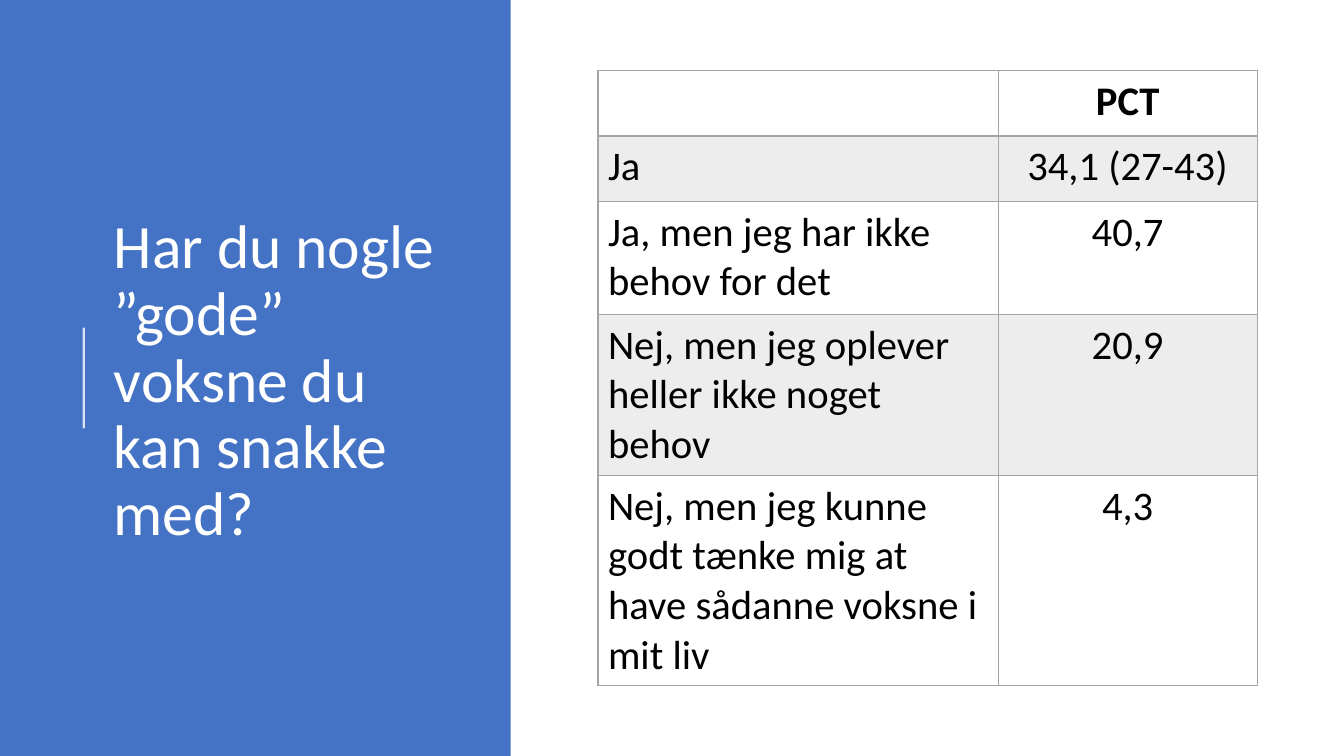
from lxml.etree import SubElement
from pptx import Presentation
from pptx.dml.color import RGBColor
from pptx.enum.shapes import MSO_CONNECTOR as CONN, MSO_SHAPE as SHAPE
from pptx.enum.text import MSO_ANCHOR as ANCHOR, PP_ALIGN as ALIGN
from pptx.oxml.ns import qn
from pptx.util import Inches, Pt

BLUE = RGBColor(0x44, 0x72, 0xC4)
WHITE = RGBColor(0xFF, 0xFF, 0xFF)
BLACK = RGBColor(0x00, 0x00, 0x00)
GREY = RGBColor(0xA5, 0xA5, 0xA5)
BAND = RGBColor(0xED, 0xED, 0xED)

QUESTION = "Har du nogle ”gode” voksne du kan snakke med?"
ANSWERS = [
    ("", "PCT"),
    ("Ja", "34,1 (27-43)"),
    ("Ja, men jeg har ikke behov for det", "40,7"),
    ("Nej, men jeg oplever heller ikke noget behov", "20,9"),
    ("Nej, men jeg kunne godt tænke mig at have sådanne voksne i mit liv", "4,3"),
]
COL_WIDTHS = [29.78, 19.28]
ROW_HEIGHTS = [8.67, 8.67, 14.93, 21.33, 27.73]


class Deck:
    """Slide builder; all lengths are percentages of the slide's size."""

    font = "Calibri"
    title_size = Pt(44)
    table_size = Pt(29)

    def __init__(self, prs):
        self.prs = prs
        self.s = prs.slides.add_slide(prs.slide_layouts[6])

    def x(self, share):
        return round(self.prs.slide_width * share / 100)

    def y(self, share):
        return round(self.prs.slide_height * share / 100)

    def box(self, left, top, width, height):
        return self.x(left), self.y(top), self.x(width), self.y(height)

    def style(self, p, size, color, bold=False):
        p.font.name, p.font.size, p.font.bold = self.font, size, bold
        p.font.color.rgb = color

    def panel(self, *box, color):
        sp = self.s.shapes.add_shape(SHAPE.RECTANGLE, *self.box(*box))
        sp.shadow.inherit = False
        sp.fill.solid()
        sp.fill.fore_color.rgb = color
        sp.line.fill.background()

    def title(self, *box, text):
        tf = self.s.shapes.add_textbox(*self.box(*box)).text_frame
        tf.word_wrap = True
        tf.vertical_anchor = ANCHOR.MIDDLE
        p = tf.paragraphs[0]
        p.text, p.line_spacing = text, 0.9
        self.style(p, self.title_size, WHITE)

    def rule(self, x, top, bottom, opacity):
        line = self.s.shapes.add_connector(
            CONN.STRAIGHT, self.x(x), self.y(bottom), self.x(x), self.y(top))
        line.line.width = Pt(1.5)
        line.line.color.rgb = WHITE
        spPr = line._element.spPr
        SubElement(next(spPr.iter(qn("a:srgbClr"))), qn("a:alpha"), val=str(opacity * 1000))
        SubElement(spPr, qn("a:effectLst"))

    def border(self, cell, side, width):
        tcPr = cell._tc.get_or_add_tcPr()
        ln = SubElement(tcPr, qn(f"a:ln{side}"), w=str(Pt(width)))
        SubElement(SubElement(ln, qn("a:solidFill")), qn("a:srgbClr"), val=str(GREY))

    def cell(self, cell, text, row, col):
        for side in "LRTB":
            under_header = (row, side) in ((0, "B"), (1, "T"))
            self.border(cell, side, 2 if under_header else 1)
        if row % 2:
            cell.fill.solid()
            cell.fill.fore_color.rgb = BAND
        else:
            cell.fill.background()
        cell.margin_left = cell.margin_right = Inches(0.1)
        cell.margin_top = cell.margin_bottom = Inches(0.06)
        p = cell.text_frame.paragraphs[0]
        p.text = text
        p.alignment = ALIGN.CENTER if col else ALIGN.LEFT
        self.style(p, self.table_size, BLACK, bold=row == 0)

    def table(self, left, top, rows, widths, heights):
        box = self.box(left, top, sum(widths), sum(heights))
        tbl = self.s.shapes.add_table(len(rows), len(widths), *box).table
        tbl.first_row = tbl.horz_banding = False
        for column, width in zip(tbl.columns, widths):
            column.width = self.x(width)
        for i, (row, height) in enumerate(zip(rows, heights)):
            tbl.rows[i].height = self.y(height)
            for j, text in enumerate(row):
                self.cell(tbl.cell(i, j), text, i, j)


def main():
    prs = Presentation()
    prs.slide_width, prs.slide_height = Inches(13.33), Inches(7.5)
    deck = Deck(prs)
    deck.panel(0, 0, 38, 100, color=BLUE)
    deck.title(7.73, 10.4, 27.68, 80.27, text=QUESTION)
    deck.rule(6.23, 43.33, 56.67, opacity=80)
    deck.table(44.49, 9.33, ANSWERS, COL_WIDTHS, ROW_HEIGHTS)
    prs.save("out.pptx")


if __name__ == "__main__":
    main()
